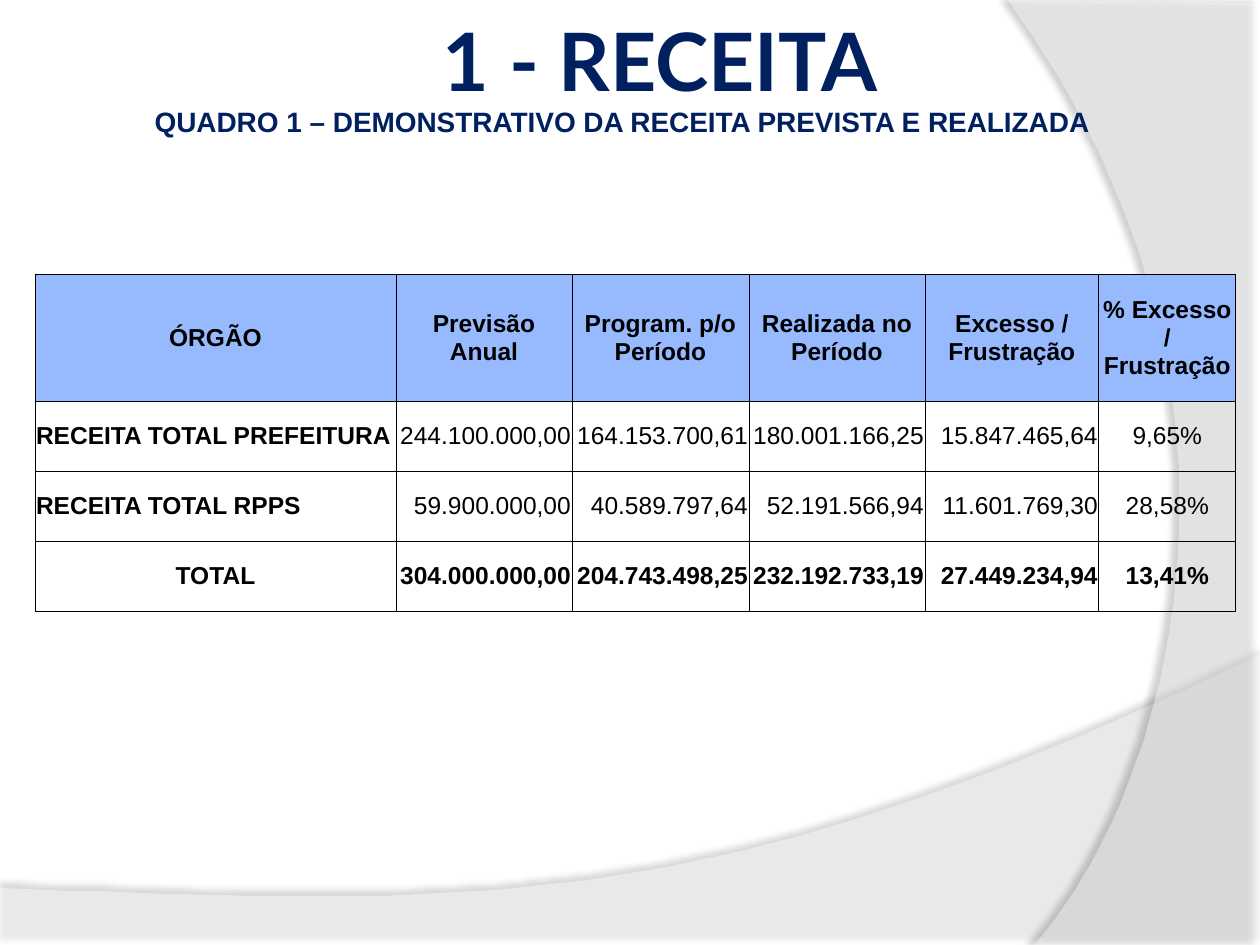
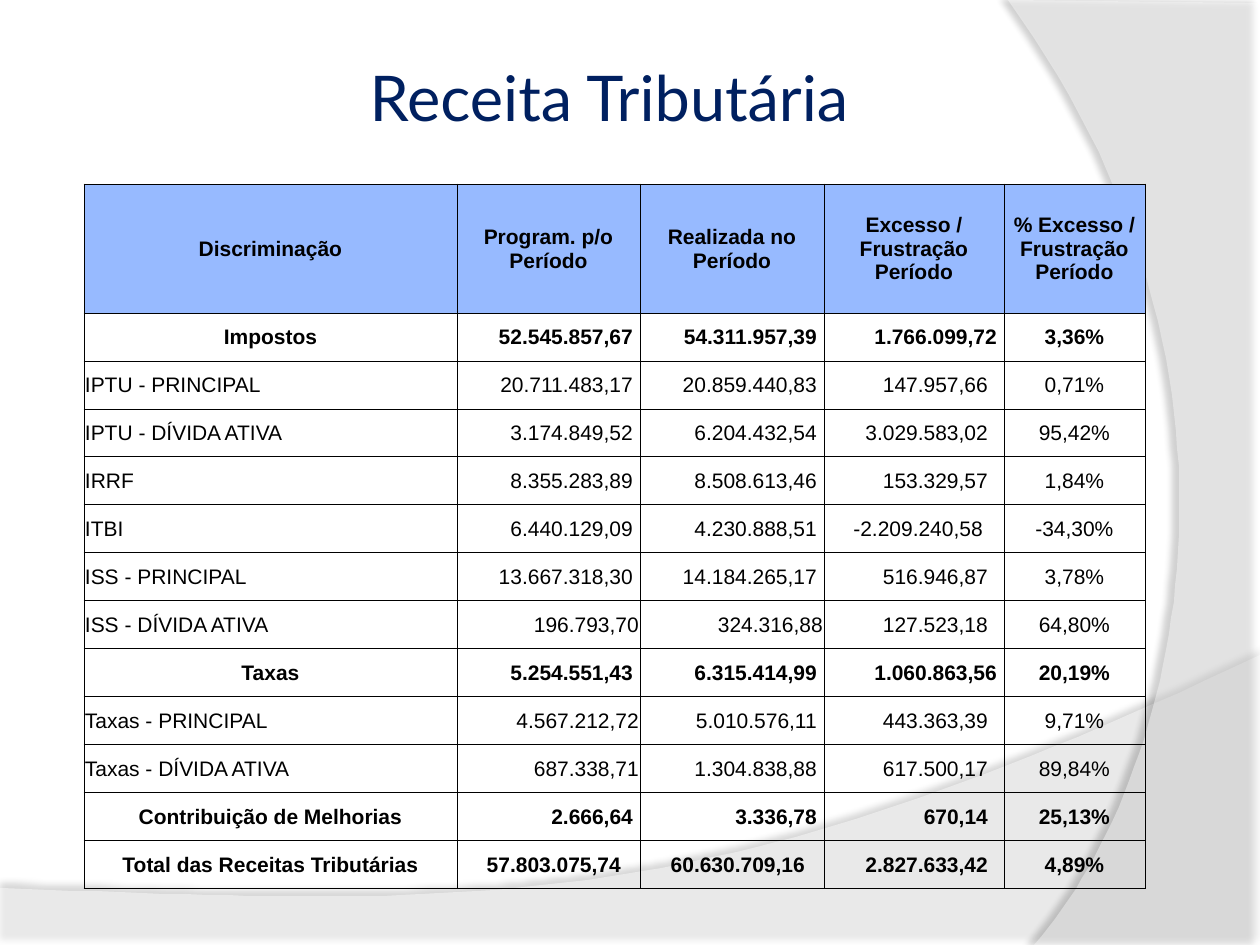
from lxml import etree
from pptx import Presentation
from pptx import util as u
from pptx.dml.color import RGBColor
from pptx.enum import text
from pptx.oxml.ns import qn

EMU_PER_PX = 914400 / 126
WIDTH, HEIGHT = 1260, 945

WHITE = RGBColor(0xFF, 0xFF, 0xFF)
BLACK = RGBColor(0x00, 0x00, 0x00)
NAVY = RGBColor(0x00, 0x20, 0x60)
HEADER_BLUE = RGBColor(0x97, 0xBA, 0xFF)
TITLE_FONT, BODY_FONT = "Lato", "Arial"

LEFT, CENTER, RIGHT = text.PP_ALIGN.LEFT, text.PP_ALIGN.CENTER, text.PP_ALIGN.RIGHT

# Row styles: label alignment, label bold, values bold
SECTION = (CENTER, True, True)
ENTITY = (LEFT, True, False)
ITEM = (LEFT, False, False)

BODY_HEADER = ("ÓRGÃO", "Previsão Anual", "Program. p/o Período", "Realizada no Período",
               "Excesso / Frustração", "% Excesso / Frustração")
BODY_ROWS = [
    (ENTITY, "RECEITA TOTAL PREFEITURA", "244.100.000,00", "164.153.700,61",
     "180.001.166,25", "15.847.465,64", "9,65%"),
    (ENTITY, "RECEITA TOTAL RPPS", "59.900.000,00", "40.589.797,64",
     "52.191.566,94", "11.601.769,30", "28,58%"),
    (SECTION, "TOTAL", "304.000.000,00", "204.743.498,25",
     "232.192.733,19", "27.449.234,94", "13,41%"),
]

TAX_HEADER = ("Discriminação", "Program. p/o Período", "Realizada no Período",
              "Excesso / Frustração Período", "% Excesso / Frustração Período")
TAX_ROWS = [
    (SECTION, "Impostos", "52.545.857,67", "54.311.957,39", "1.766.099,72", "3,36%"),
    (ITEM, "IPTU - PRINCIPAL", "20.711.483,17", "20.859.440,83", "147.957,66", "0,71%"),
    (ITEM, "IPTU - DÍVIDA ATIVA", "3.174.849,52", "6.204.432,54", "3.029.583,02", "95,42%"),
    (ITEM, "IRRF", "8.355.283,89", "8.508.613,46", "153.329,57", "1,84%"),
    (ITEM, "ITBI", "6.440.129,09", "4.230.888,51", "-2.209.240,58", "-34,30%"),
    (ITEM, "ISS - PRINCIPAL", "13.667.318,30", "14.184.265,17", "516.946,87", "3,78%"),
    (ITEM, "ISS - DÍVIDA ATIVA", "196.793,70", "324.316,88", "127.523,18", "64,80%"),
    (SECTION, "Taxas", "5.254.551,43", "6.315.414,99", "1.060.863,56", "20,19%"),
    (ITEM, "Taxas - PRINCIPAL", "4.567.212,72", "5.010.576,11", "443.363,39", "9,71%"),
    (ITEM, "Taxas - DÍVIDA ATIVA", "687.338,71", "1.304.838,88", "617.500,17", "89,84%"),
    (SECTION, "Contribuição de Melhorias", "2.666,64", "3.336,78", "670,14", "25,13%"),
    (SECTION, "Total das Receitas Tributárias", "57.803.075,74", "60.630.709,16",
     "2.827.633,42", "4,89%"),
]
TAX_INDENTS = {1: 7, 2: 7, 3: 16}
# Cells whose right indent differs from that of their column
TAX_CELL_INDENTS = {(1, 3): 7, (8, 3): 7, (5, 3): 21, (7, 1): 1, (7, 2): 1,
                    (9, 1): 1, (10, 1): 1, (12, 1): 19, (12, 2): 19}


def px(n):
    return u.Emu(round(n * EMU_PER_PX))


def pad(holder, left, top, right, bottom):
    """Set the margins of a text frame or table cell and centre it vertically."""
    holder.margin_left, holder.margin_top = px(left), px(top)
    holder.margin_right, holder.margin_bottom = px(right), px(bottom)
    holder.vertical_anchor = text.MSO_ANCHOR.MIDDLE


def write(tf, words, size, font=BODY_FONT, color=BLACK, bold=False, align=LEFT):
    p = tf.paragraphs[0]
    p.alignment = align
    r = p.add_run()
    r.text = words
    r.font.size, r.font.name, r.font.bold = u.Pt(size), font, bold
    r.font.color.rgb = color


def add_text(slide, box, words, margins=(6, 6, 6, 6), wrap=True, **style):
    sp = slide.shapes.add_textbox(*map(px, box))
    tf = sp.text_frame
    tf.word_wrap = wrap
    pad(tf, *margins)
    write(tf, words, color=NAVY, **style)


def bezier(a, b, c, d, steps=60):
    """Points along a cubic curve, without its start."""
    points = []
    for i in range(1, steps + 1):
        t = i / steps
        s = 1 - t
        points.append(tuple(s**3 * k + 3 * s * s * t * m + 3 * s * t * t * n + t**3 * q
                            for k, m, n, q in zip(a, b, c, d)))
    return points


def add_wave(slide, points, opacity, shadow_opacity, distance, angle):
    """Translucent white outline with a soft shadow; opacities are percentages."""
    builder = slide.shapes.build_freeform(*points[0], scale=EMU_PER_PX)
    builder.add_line_segments(points[1:], close=True)
    sp = builder.convert_to_shape()
    sp.fill.solid()
    sp.fill.fore_color.rgb = WHITE
    sp.line.fill.background()
    sp.shadow.inherit = False
    props = sp.element.spPr
    fill_color = props.find(qn("a:solidFill")).find(qn("a:srgbClr"))
    etree.SubElement(fill_color, qn("a:alpha"), val=str(opacity * 1000))
    shadow = etree.SubElement(props.find(qn("a:effectLst")), qn("a:outerShdw"),
                              blurRad=str(u.Pt(4)), dist=str(u.Pt(distance)),
                              dir=str(angle * 60000), algn="ctr", rotWithShape="0")
    shadow_color = etree.SubElement(shadow, qn("a:srgbClr"), val=str(BLACK))
    etree.SubElement(shadow_color, qn("a:alpha"), val=str(shadow_opacity * 1000))


def add_backdrop(slide):
    bottom = [(0, 888), (0, 946), (WIDTH, 946), (WIDTH, 655)]
    bottom += bezier(bottom[-1], (704, 919), (493, 906), bottom[0])
    add_wave(slide, bottom, 45, 35, 3.5, 270)
    side = [(WIDTH, 3), (WIDTH, HEIGHT), (1034, HEIGHT)]
    side += bezier(side[-1], (1178, 780), (1283, 378), (1008, 0))
    add_wave(slide, side, 40, 45, 4, 180)


def add_slide(prs):
    slide = prs.slides.add_slide(prs.slide_layouts[6])
    slide.background.fill.solid()
    slide.background.fill.fore_color.rgb = WHITE
    add_backdrop(slide)
    return slide


def add_borders(cell):
    props = cell._tc.get_or_add_tcPr()
    for i, side in enumerate(("lnL", "lnR", "lnT", "lnB")):
        line = etree.Element(qn(f"a:{side}"), w=str(u.Pt(0.5)))
        fill = etree.SubElement(line, qn("a:solidFill"))
        etree.SubElement(fill, qn("a:srgbClr"), val=str(BLACK))
        props.insert(i, line)


def fill_cell(cell, words, fill=None, indent=1, **style):
    pad(cell, 1, 1, indent, 0)
    if fill is None:
        cell.fill.background()
    else:
        cell.fill.solid()
        cell.fill.fore_color.rgb = fill
    add_borders(cell)
    write(cell.text_frame, words, **style)


def add_revenue_table(slide, left, top, widths, heights, header, rows, size,
                      indents=None, cell_indents=None):
    """heights is (header, body); indents map columns, cell_indents (row, column)."""
    indents, cell_indents = indents or {}, cell_indents or {}
    header_height, row_height = heights
    table = slide.shapes.add_table(
        len(rows) + 1, len(widths), px(left), px(top), px(sum(widths)),
        px(header_height + row_height * len(rows))).table
    table.first_row = table.horz_banding = False
    for column, width in zip(table.columns, widths):
        column.width = px(width)
    for i, row in enumerate(table.rows):
        row.height = px(row_height if i else header_height)

    for c, words in enumerate(header):
        fill_cell(table.cell(0, c), words, HEADER_BLUE, size=size, bold=True, align=CENTER)
    percent = len(header) - 1
    for i, ((label_align, label_bold, value_bold), *values) in enumerate(rows, 1):
        for c, words in enumerate(values):
            align = label_align if c == 0 else CENTER if c == percent else RIGHT
            fill_cell(table.cell(i, c), words, size=size, align=align,
                      bold=value_bold if c else label_bold,
                      indent=cell_indents.get((i, c), indents.get(c, 1)))


def add_revenue_slide(prs):
    slide = add_slide(prs)
    add_text(slide, (64, 0, 1134, 118), "1 - RECEITA", margins=(379, 6, 6, 6),
             size=46, font=TITLE_FONT, bold=True)
    add_text(slide, (137, 98, 971, 47),
             "QUADRO 1 – DEMONSTRATIVO DA RECEITA PREVISTA E REALIZADA",
             wrap=False, size=16, bold=True, align=CENTER)
    add_revenue_table(slide, 35, 274, (361, 176, 177, 176, 174, 137), (127, 70),
                      BODY_HEADER, BODY_ROWS, 14)


def add_tax_slide(prs):
    slide = add_slide(prs)
    add_text(slide, (63, 38, 1092, 117), "Receita Tributária",
             size=36, font=TITLE_FONT, align=CENTER)
    add_revenue_table(slide, 84, 184, (373, 183, 184, 180, 141), (129, 48),
                      TAX_HEADER, TAX_ROWS, 12, TAX_INDENTS, TAX_CELL_INDENTS)


def main():
    prs = Presentation()
    prs.slide_width, prs.slide_height = px(WIDTH), px(HEIGHT)
    add_revenue_slide(prs)
    add_tax_slide(prs)
    prs.save("out.pptx")


if __name__ == "__main__":
    main()
